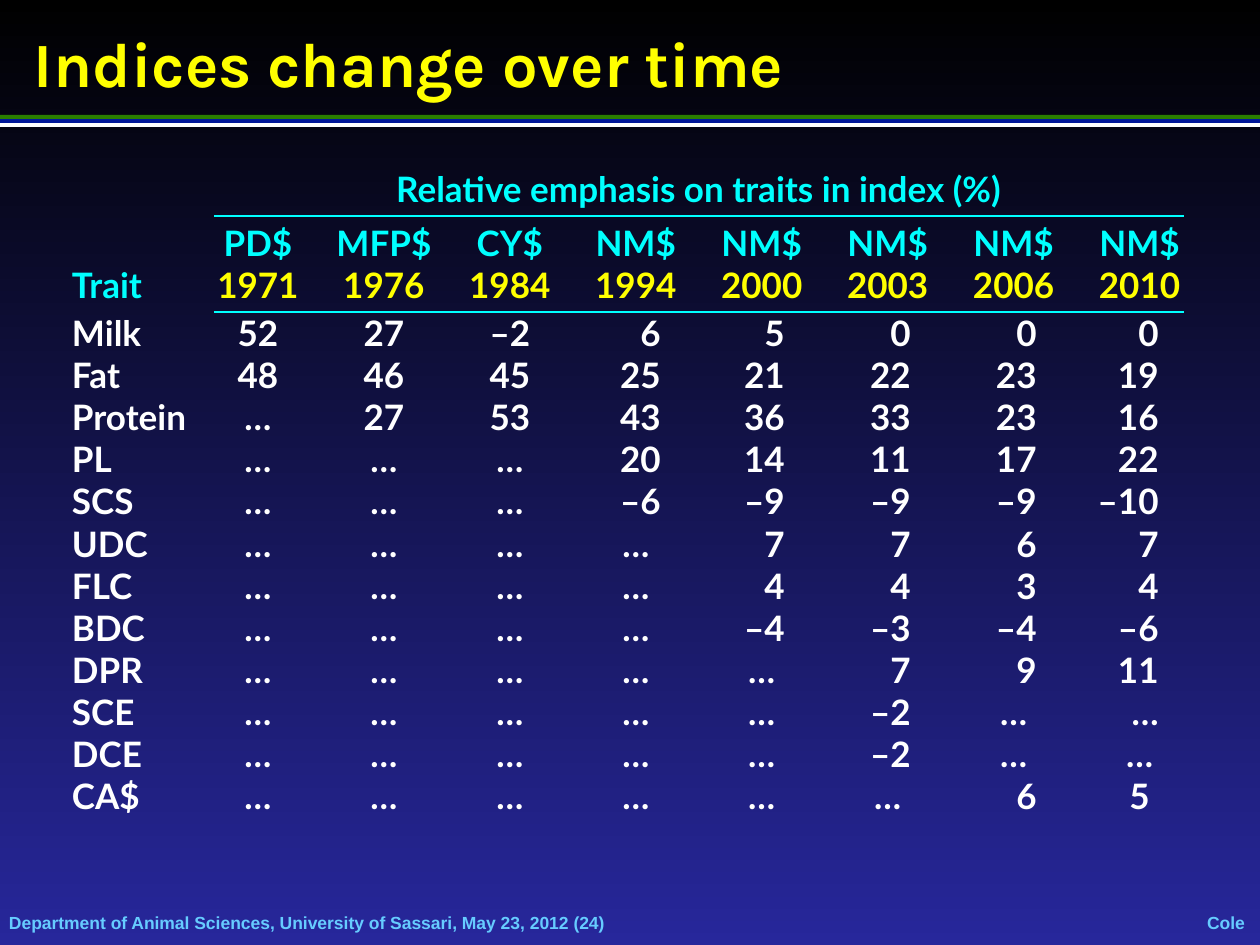
from dataclasses import dataclass

from lxml import etree
from pptx import Presentation
from pptx import util as u
from pptx.dml.color import RGBColor
from pptx.enum import shapes, text
from pptx.oxml import ns

PX = 914400 // 126
LEFT, CENTER, RIGHT = text.PP_ALIGN.LEFT, text.PP_ALIGN.CENTER, text.PP_ALIGN.RIGHT


@dataclass(frozen=True)
class Theme:
    top: str = "000000"
    bottom: str = "27279B"
    yellow: str = "FFFF00"
    cyan: str = "00FFFF"
    white: str = "FFFFFF"
    green: str = "2A7E00"
    blue: str = "001799"
    footer: str = "66CCFF"
    title_font: str = "Karla"
    table_font: str = "Lato"
    footer_font: str = "Arial"
    title_size: int = 36
    table_size: int = 20
    footer_size: int = 10


THEME = Theme()
NO_STYLE = "{2D5ABB26-0587-4C30-8999-92F81FD0307C}"
COL_WIDTHS = [142, 88, 164, 88, 164, 88, 164, 126, 88]
ROW_HEIGHTS = [48, 96] + [42] * 12
INDICES = [("PD$", "1971"), ("MFP$", "1976"), ("CY$", "1984"), ("NM$", "1994"),
           ("NM$", "2000"), ("NM$", "2003"), ("NM$", "2006"), ("NM$", "2010")]
EMPHASIS = """
Milk 52 27 –2 6 5 0 0 0
Fat 48 46 45 25 21 22 23 19
Protein … 27 53 43 36 33 23 16
PL … … … 20 14 11 17 22
SCS … … … –6 –9 –9 –9 –10
UDC … … … … 7 7 6 7
FLC … … … … 4 4 3 4
BDC … … … … –4 –3 –4 –6
DPR … … … … … 7 9 11
SCE … … … … … –2 … …
DCE … … … … … –2 … …
CA$ … … … … … … 6 5
"""
RIGHT_PADS = {4: 57, 5: 21, 6: 59, 7: 59, 8: 25}
CENTER_PADS = {7: 38}
ALIGN_EXCEPTIONS = {("SCE", 8): RIGHT, ("CA$", 8): CENTER}


def px(*values):
    return [u.Emu(v * PX) for v in values]


def apply(obj, formats):
    for name, value in formats.items():
        setattr(obj, name, value)


def write(tf, lines, font, size, align=LEFT, margins=(0, 0, 0, 0)):
    sides = ("margin_left", "margin_top", "margin_right", "margin_bottom")
    apply(tf, dict(zip(sides, px(*margins))))
    for i, (content, color) in enumerate(lines):
        p = tf.paragraphs[0] if i == 0 else tf.add_paragraph()
        p.alignment = align
        r = p.add_run()
        r.text = content
        apply(r.font, {"name": font, "size": u.Pt(size), "bold": True})
        r.font.color.rgb = RGBColor.from_string(color)


def add_background(s):
    fill = s.background.fill
    fill.gradient()
    fill.gradient_angle = 270
    for stop, color in zip(fill.gradient_stops, (THEME.top, THEME.bottom)):
        stop.color.rgb = RGBColor.from_string(color)


def add_title(s, box, content):
    sp = s.shapes.title
    apply(sp, dict(zip(("left", "top", "width", "height"), px(*box))))
    tf = sp.text_frame
    apply(tf, {"word_wrap": True, "auto_size": text.MSO_AUTO_SIZE.NONE,
               "vertical_anchor": text.MSO_ANCHOR.MIDDLE})
    write(tf, [(content, THEME.yellow)], THEME.title_font, THEME.title_size,
          margins=(13, 6, 13, 6))


def add_rules(s, box):
    left, top, width, height = box
    for offset, color in ((0, THEME.green), (8, THEME.white), (4, THEME.blue)):
        sp = s.shapes.add_shape(shapes.MSO_SHAPE.RECTANGLE,
                                *px(left, top + offset, width, height - 8))
        sp.shadow.inherit = False
        sp.fill.solid()
        sp.fill.fore_color.rgb = RGBColor.from_string(color)
        sp.line.fill.background()


def add_footer(s, box, content, align, wrap):
    tf = s.shapes.add_textbox(*px(*box)).text_frame
    apply(tf, {"word_wrap": wrap, "vertical_anchor": text.MSO_ANCHOR.MIDDLE})
    write(tf, [(content, THEME.footer)], THEME.footer_font, THEME.footer_size, align)


def add_border(cell, side):
    ln = etree.Element(ns.qn(f"a:ln{side}"), w=str(u.Pt(1.5)))
    fill = etree.SubElement(ln, ns.qn("a:solidFill"))
    etree.SubElement(fill, ns.qn("a:srgbClr"), val=THEME.cyan)
    cell._tc.get_or_add_tcPr().insert(0, ln)


def write_cell(cell, lines, align=LEFT, margins=(0, 0, 0, 0)):
    write(cell.text_frame, lines, THEME.table_font, THEME.table_size, align)
    sides = ("margin_left", "margin_top", "margin_right", "margin_bottom")
    apply(cell, dict(zip(sides, px(*margins))))


def write_headings(table):
    trait, heading = table.cell(0, 0), table.cell(0, 1)
    trait.merge(table.cell(1, 0))
    heading.merge(table.cell(0, len(INDICES)))
    write_cell(trait, [("Trait", THEME.cyan)], margins=(0, 0, 0, 6))
    trait.vertical_anchor = text.MSO_ANCHOR.BOTTOM
    write_cell(heading, [("Relative emphasis on traits in index (%)", THEME.cyan)],
               CENTER, (0, 0, 0, 6))
    for col, (index, year) in enumerate(INDICES, 1):
        cell = table.cell(1, col)
        write_cell(cell, [(index, THEME.cyan), (year, THEME.yellow)], CENTER,
                   (0, 6, CENTER_PADS.get(col, 0), 6))
        add_border(table.cell(0, col), "B")
        add_border(cell, "T")


def write_values(table):
    for row, line in enumerate(EMPHASIS.strip().splitlines(), 2):
        trait, *values = line.split()
        write_cell(table.cell(row, 0), [(trait, THEME.white)])
        for col, value in enumerate(values, 1):
            usual = RIGHT if col in RIGHT_PADS and value != "…" else CENTER
            align = ALIGN_EXCEPTIONS.get((trait, col), usual)
            pads = RIGHT_PADS if align == RIGHT else CENTER_PADS
            write_cell(table.cell(row, col), [(value, THEME.white)], align,
                       (0, 0, pads.get(col, 0), 0))


def add_emphasis_table(s, left, top):
    box = px(left, top, sum(COL_WIDTHS), sum(ROW_HEIGHTS))
    table = s.shapes.add_table(len(ROW_HEIGHTS), len(COL_WIDTHS), *box).table
    apply(table, {"first_row": False, "horz_banding": False})
    table._tbl.tblPr.find(ns.qn("a:tableStyleId")).text = NO_STYLE
    for column, width in zip(table.columns, px(*COL_WIDTHS)):
        column.width = width
    for row, height in zip(table.rows, px(*ROW_HEIGHTS)):
        row.height = height
        for cell in row.cells:
            cell.fill.background()
    write_headings(table)
    write_values(table)


def main():
    prs = Presentation()
    apply(prs, {"slide_width": u.Inches(10), "slide_height": u.Inches(7.5)})
    s = prs.slides.add_slide(prs.slide_layouts[5])
    add_background(s)
    add_footer(s, (9, 912, 1019, 21),
               "Department of Animal Sciences, University of Sassari, May 23, 2012 (24)",
               LEFT, True)
    add_footer(s, (1207, 912, 38, 21), "Cole", CENTER, False)
    add_rules(s, (0, 115, 1260, 12))
    add_emphasis_table(s, 72, 168)
    add_title(s, (21, 20, 1134, 84), "Indices change over time")
    prs.save("out.pptx")


if __name__ == "__main__":
    main()
